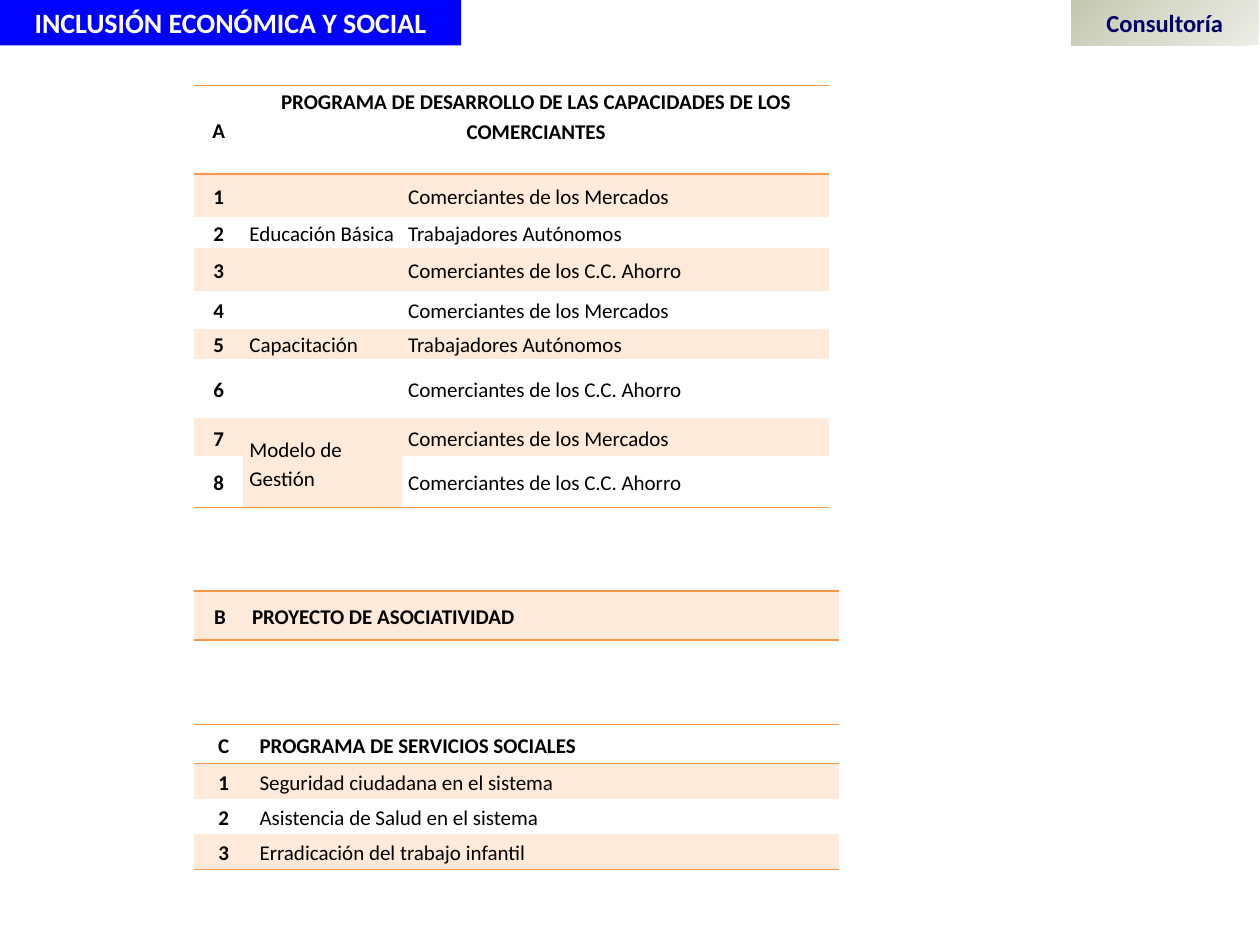
import pptx
import pptx.util
import pptx.oxml
import pptx.oxml.ns
import pptx.dml.color
import pptx.enum.shapes
import pptx.enum.text
from pptx.util import Inches

COLORS = {
    "banner": "0000FF", "white": "FFFFFF", "navy": "000066", "black": "000000",
    "band": "FDEADA", "rule": "F79646",
    "tag_dark": "C3C7AD", "tag_mid": "D9DBCD", "tag_light": "ECEDE6",
}
FONT = "Calibri"
NO_STYLE = "{2D5ABB26-0587-4C30-8999-92F81FD0307C}"
NAMESPACE = pptx.oxml.ns.nsdecls("a")
ALIGN = pptx.enum.text.PP_ALIGN
MIDDLE = pptx.enum.text.MSO_ANCHOR.MIDDLE


def rgb(name):
    return pptx.dml.color.RGBColor.from_string(COLORS[name])


def write_text(frame, text, size=12, bold=False, color="black", align=ALIGN.LEFT, spacing=None):
    paragraph = frame.paragraphs[0]
    paragraph.alignment = align
    paragraph.line_spacing = spacing
    if not text:
        # Keep an empty cell from growing its row
        paragraph._p.get_or_add_endParaRPr().set("sz", str(size * 100))
        return
    run = paragraph.add_run()
    run.text = text
    run.font.name = FONT
    run.font.size = pptx.util.Pt(size)
    run.font.bold = bold
    run.font.color.rgb = rgb(color)


def add_banner(slide, box, text):
    title = slide.shapes.title
    title.left, title.top, title.width, title.height = map(Inches, box)
    title.fill.solid()
    title.fill.fore_color.rgb = rgb("banner")
    title.text_frame.vertical_anchor = MIDDLE
    title.text_frame.auto_size = pptx.enum.text.MSO_AUTO_SIZE.NONE
    write_text(title.text_frame, text, size=16, bold=True, color="white", align=ALIGN.CENTER)


def add_tag(slide, box, text):
    shape = slide.shapes.add_shape(pptx.enum.shapes.MSO_SHAPE.RECTANGLE, *map(Inches, box))
    shape.shadow.inherit = False
    shape.line.fill.background()
    # Radial gradient that starts at the top left corner
    stops = "".join(
        f'<a:gs pos="{position}"><a:srgbClr val="{COLORS[name]}"/></a:gs>'
        for position, name in ((0, "tag_dark"), (50000, "tag_mid"), (100000, "tag_light")))
    gradient = pptx.oxml.parse_xml(
        f'<a:gradFill {NAMESPACE}><a:gsLst>{stops}</a:gsLst><a:path path="circle">'
        '<a:fillToRect r="100000" b="100000"/></a:path></a:gradFill>')
    shape._element.spPr.find(pptx.oxml.ns.qn("a:prstGeom")).addnext(gradient)
    shape.text_frame.word_wrap = True
    shape.text_frame.vertical_anchor = MIDDLE
    write_text(shape.text_frame, text, size=14, bold=True, color="navy", align=ALIGN.CENTER)


def format_cell(cell, banded, sides):
    cell.vertical_anchor = MIDDLE
    cell.margin_left = cell.margin_right = Inches(0.05)
    cell.margin_top = cell.margin_bottom = 0
    cell.fill.solid()
    cell.fill.fore_color.rgb = rgb("band" if banded else "white")
    properties = cell._tc.get_or_add_tcPr()
    if not banded:
        color = properties.find(".//" + pptx.oxml.ns.qn("a:srgbClr"))
        color.append(pptx.oxml.parse_xml(f'<a:alpha {NAMESPACE} val="20000"/>'))
    # Bottom goes in before top, so that top ends up first
    for side in sides:
        properties.insert(0, pptx.oxml.parse_xml(
            f'<a:ln{side} {NAMESPACE} w="12700"><a:solidFill>'
            f'<a:srgbClr val="{COLORS["rule"]}"/></a:solidFill></a:ln{side}>'))


def add_program_table(slide, left, top, widths, heights, rows, first_banded=False):
    """Ruled header, banded rows; the first column holds bold centred codes."""
    table = slide.shapes.add_table(
        len(rows), len(widths), Inches(left), Inches(top),
        Inches(sum(widths)), Inches(sum(heights))).table
    table._tbl.tblPr.find(pptx.oxml.ns.qn("a:tableStyleId")).text = NO_STYLE
    for column, width in zip(table.columns, widths):
        column.width = Inches(width)
    for row, height in zip(table.rows, heights):
        row.height = Inches(height)
    for row_index, texts in enumerate(rows):
        is_header = row_index == 0
        is_last = row_index == len(rows) - 1
        sides = ("B" if is_header or is_last else "") + ("T" if is_header else "")
        for column_index, text in enumerate(texts):
            cell = table.cell(row_index, column_index)
            format_cell(cell, (row_index % 2 == 1) != first_banded, sides)
            write_text(cell.text_frame, text, bold=is_header or column_index == 0,
                       align=ALIGN.LEFT if column_index else ALIGN.CENTER, spacing=1.15)
    return table


def add_training_table(slide, left, top):
    markets, freelancers, malls = (
        "Comerciantes de los Mercados", "Trabajadores Autónomos", "Comerciantes de los C.C. Ahorro")
    rows = [
        ("A", "PROGRAMA DE DESARROLLO DE LAS CAPACIDADES DE LOS COMERCIANTES", ""),
        ("1", "", markets),
        ("2", "Educación Básica", freelancers),
        ("3", "", malls),
        ("4", "", markets),
        ("5", "Capacitación", freelancers),
        ("6", "", malls),
        ("7", "Modelo de Gestión", markets),
        ("8", "", malls),
    ]
    heights = [0.7, 0.34, 0.25, 0.34, 0.3, 0.24, 0.47, 0.3, 0.41]
    table = add_program_table(slide, left, top, [0.39, 1.26, 3.39], heights, rows)
    # Heading spans two columns and sits above the middle of its row
    heading = table.cell(0, 1)
    heading.merge(table.cell(0, 2))
    heading.margin_bottom = Inches(0.23)
    heading.text_frame.paragraphs[0].alignment = ALIGN.CENTER
    # Last group spans two rows
    table.cell(7, 1).merge(table.cell(8, 1))
    format_cell(table.cell(7, 1), True, "B")


def main():
    presentation = pptx.Presentation()
    presentation.slide_width, presentation.slide_height = Inches(10), Inches(7.5)
    slide = presentation.slides.add_slide(presentation.slide_layouts.get_by_name("Title Only"))

    # Top strip
    add_banner(slide, (0, 0, 3.66, 0.36), "INCLUSIÓN ECONÓMICA Y SOCIAL")
    add_tag(slide, (8.5, 0, 1.49, 0.36), "Consultoría")

    # Programs A, B and C
    left = 1.54
    add_training_table(slide, left, 0.68)
    add_program_table(slide, left, 4.69, [0.41, 4.71], [0.39],
                      [("B", "PROYECTO DE ASOCIATIVIDAD")], first_banded=True)
    add_program_table(slide, left, 5.75, [0.47, 4.65], [0.31] + [0.28] * 3, [
        ("C", "PROGRAMA DE SERVICIOS SOCIALES"),
        ("1", "Seguridad ciudadana en el sistema"),
        ("2", "Asistencia de Salud en el sistema"),
        ("3", "Erradicación del trabajo infantil"),
    ])
    presentation.save("out.pptx")


if __name__ == "__main__":
    main()
